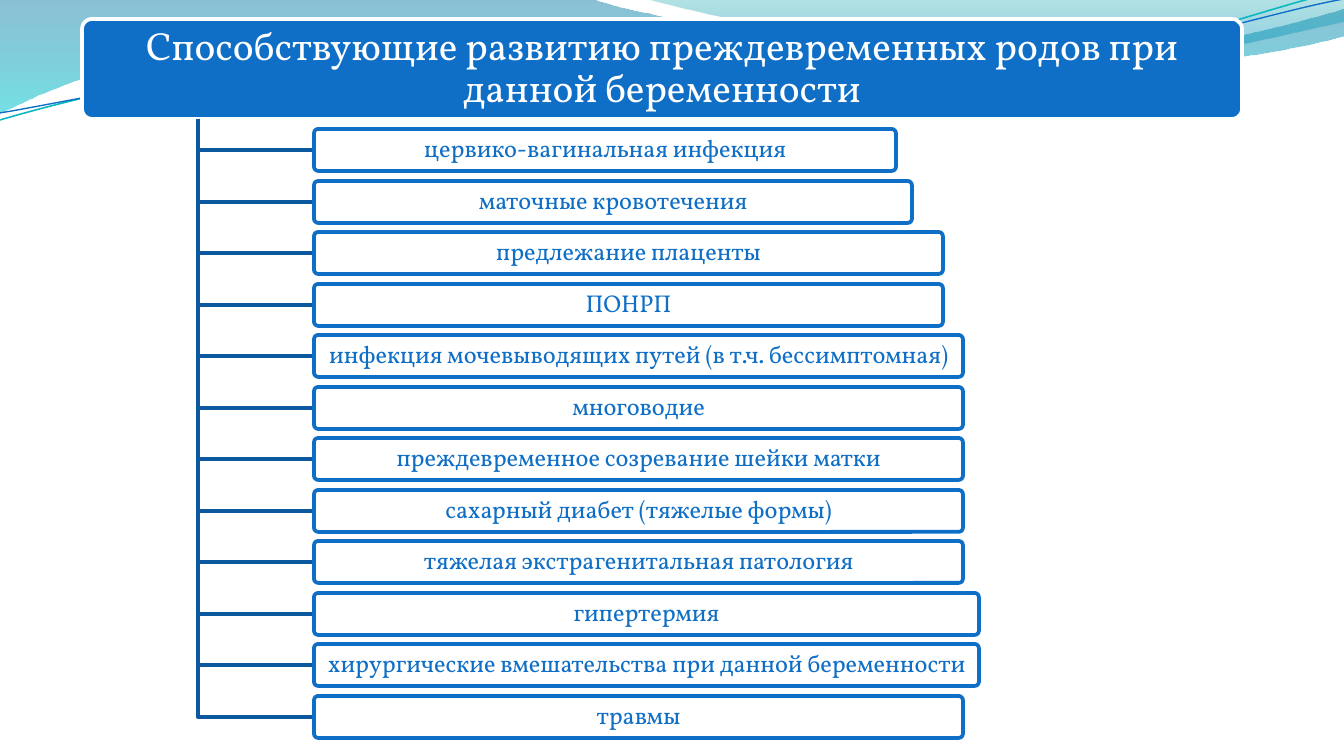
from dataclasses import dataclass

from lxml.etree import SubElement
from pptx import Presentation
from pptx.dml.color import RGBColor
from pptx.enum.shapes import MSO_SHAPE as Preset
from pptx.enum.text import MSO_ANCHOR as Anchor, MSO_AUTO_SIZE as AutoSize, PP_ALIGN as Align
from pptx.oxml.ns import qn
from pptx.util import Pt

PX = 914400 / 134.4
WIDTH, HEIGHT = 1344, 756
BLUE, DARK_BLUE, WHITE = "0F6FC6", "0C599F", "FFFFFF"
FONT = "Vollkorn"

Point = tuple[int, int]


@dataclass(frozen=True)
class Stop:
    position: float
    color: str
    opacity: int


@dataclass(frozen=True)
class Wave:
    start: Point
    segments: list[tuple[Point, ...]]
    stops: tuple[Stop, ...] = ()
    line_color: str = ""
    line_width: float = 0


@dataclass(frozen=True)
class Factor:
    text: str
    width: int


@dataclass(frozen=True)
class Frame:
    left: int
    top: int
    width: int
    height: int

    def emu(self) -> list[int]:
        return [px(value) for value in (self.left, self.top, self.width, self.height)]


WAVES = [
    Wave(
        (0, 0),
        [
            ((591, -1),),
            ((640, 17), (892, 63), (1019, 63)),
            ((1146, 63), (1288, 26), (1344, 9)),
            ((1345, 36),),
            ((1321, 44), (1169, 77), (1003, 77)),
            ((836, 75), (513, 28), (345, 35)),
            ((173, 36), (62, 83), (-1, 114)),
            ((0, 0),),
        ],
        stops=(Stop(0, "0074A1", 45), Stop(1, "00C6CF", 55)),
    ),
    Wave(
        (644, -1),
        [
            ((684, 11), (917, 62), (1034, 66)),
            ((1150, 70), (1292, 32), (1344, 22)),
            ((1344, 0),),
            ((644, -1),),
        ],
        stops=(Stop(0, "00A1A9", 30), Stop(0.8, "008BBF", 45)),
    ),
    Wave(
        (0, 120),
        [
            ((65, 101), (212, 63), (372, 55)),
            ((532, 48), (796, 87), (957, 77)),
            ((1120, 66), (1262, 8), (1341, -9)),
        ],
        line_color="0AB8BF",
        line_width=0.85,
    ),
    Wave(
        (0, 113),
        [
            ((63, 103), (220, 67), (380, 60)),
            ((542, 54), (802, 83), (964, 73)),
            ((1124, 62), (1265, 13), (1344, -1)),
        ],
        line_color=BLUE,
        line_width=0.75,
    ),
]

TITLE = "Способствующие развитию преждевременных родов при данной беременности"
TITLE_FRAME = Frame(82, 19, 1160, 100)
FACTORS = [
    Factor("цервико-вагинальная инфекция", 582),
    Factor("маточные кровотечения", 598),
    Factor("предлежание плаценты", 629),
    Factor("ПОНРП", 629),
    Factor("инфекция мочевыводящих путей (в т.ч. бессимптомная)", 649),
    Factor("многоводие", 649),
    Factor("преждевременное созревание шейки матки", 649),
    Factor("сахарный диабет (тяжелые формы)", 649),
    Factor("тяжелая экстрагенитальная патология", 649),
    Factor("гипертермия", 665),
    Factor("хирургические вмешательства при данной беременности", 665),
    Factor("травмы", 649),
]
TRUNK = (198, 119)
FACTOR_LEFT, FIRST_TOP, LAST_TOP, FACTOR_HEIGHT = 314, 129, 696, 42


def px(value: float) -> int:
    return round(value * PX)


def rgb(color: str) -> RGBColor:
    return RGBColor.from_string(color)


def set_opacity(color_element, percent: int) -> None:
    SubElement(color_element, qn("a:alpha")).set("val", str(percent * 1000))


def set_line(shape, color: str, width: float) -> None:
    shape.line.color.rgb = rgb(color)
    shape.line.width = Pt(width)


def add_outline(page, start: Point, points: list[Point], close: bool):
    builder = page.shapes.build_freeform(*start, scale=PX)
    builder.add_line_segments(points, close=close)
    shape = builder.convert_to_shape()
    shape.shadow.inherit = False
    return shape


def bend(shape, segments: list[tuple[Point, ...]]) -> None:
    steps = iter(list(shape.element.spPr.iter(qn("a:lnTo"))))
    for segment in segments:
        first, *others = [next(steps) for _ in segment]
        if others:
            first.tag = qn("a:cubicBezTo")
        for step in others:
            first.append(step[0])
            step.getparent().remove(step)


def add_wave(page, wave: Wave) -> None:
    points = [point for segment in wave.segments for point in segment]
    shape = add_outline(page, wave.start, points, bool(wave.stops))
    bend(shape, wave.segments)
    if not wave.stops:
        shape.fill.background()
        set_line(shape, wave.line_color, wave.line_width)
        return
    shape.line.fill.background()
    shape.fill.gradient()
    shape.fill.gradient_angle = 270
    for target, stop in zip(shape.fill.gradient_stops, wave.stops):
        target.position = stop.position
        target.color.rgb = rgb(stop.color)
    for color, stop in zip(shape.element.spPr.iter(qn("a:srgbClr")), wave.stops):
        set_opacity(color, stop.opacity)


def add_card(page, frame: Frame, fill: str, line: str):
    box = page.shapes.add_shape(Preset.ROUNDED_RECTANGLE, *frame.emu())
    box.adjustments[0] = 0.1
    box.shadow.inherit = False
    box.fill.solid()
    box.fill.fore_color.rgb = rgb(fill)
    set_line(box, line, 2)
    return box


def write(shape, text: str, size: int, color: str) -> None:
    frame = shape.text_frame
    frame.text = text
    frame.word_wrap = True
    frame.auto_size = AutoSize.NONE
    frame.vertical_anchor = Anchor.MIDDLE
    frame.margin_left = frame.margin_right = px(4)
    frame.margin_top = frame.margin_bottom = px(3)
    para = frame.paragraphs[0]
    para.alignment = Align.CENTER
    para.line_spacing = 0.9
    para.font.name = FONT
    para.font.size = Pt(size)
    para.font.color.rgb = rgb(color)


def add_title(page) -> None:
    add_card(page, TITLE_FRAME, BLUE, WHITE)
    title = page.shapes.title
    title.left, title.top, title.width, title.height = TITLE_FRAME.emu()
    write(title, TITLE, 21, WHITE)
    page.shapes.element.append(title.element)


def add_factor(page, factor: Factor, top: int) -> None:
    middle = top + FACTOR_HEIGHT // 2
    branch = add_outline(page, TRUNK, [(TRUNK[0], middle), (FACTOR_LEFT, middle)], False)
    branch.fill.background()
    set_line(branch, DARK_BLUE, 2)
    box = add_card(page, Frame(FACTOR_LEFT, top, factor.width, FACTOR_HEIGHT), WHITE, BLUE)
    set_opacity(box.element.spPr.find(qn("a:solidFill"))[0], 90)
    write(box, factor.text, 13, BLUE)


def main() -> None:
    deck = Presentation()
    deck.slide_width, deck.slide_height = px(WIDTH), px(HEIGHT)
    page = deck.slides.add_slide(deck.slide_layouts.get_by_name("Title Only"))
    for wave in WAVES:
        add_wave(page, wave)
    add_title(page)
    pitch = (LAST_TOP - FIRST_TOP) / (len(FACTORS) - 1)
    for index, factor in enumerate(FACTORS):
        add_factor(page, factor, round(FIRST_TOP + index * pitch))
    deck.save("out.pptx")


if __name__ == "__main__":
    main()
